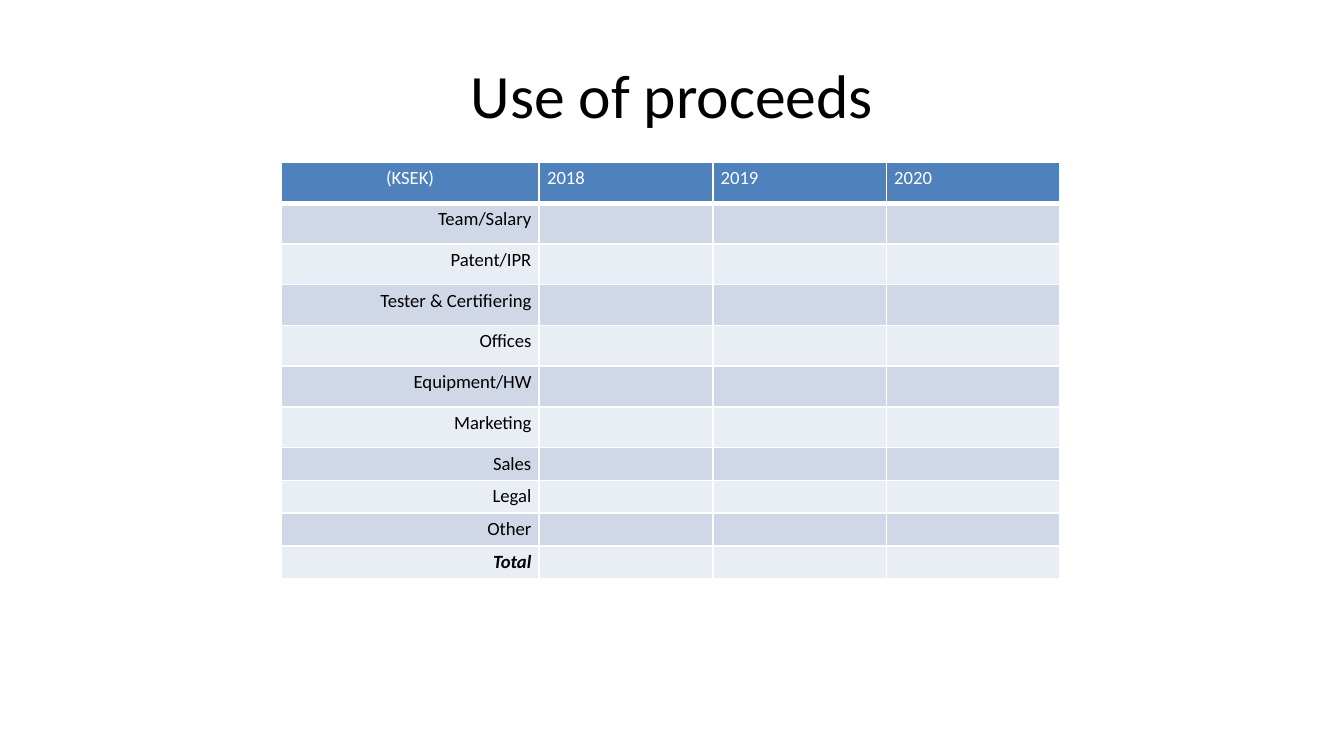
import lxml.etree
import pptx
import pptx.dml.color
import pptx.enum.text
import pptx.oxml.ns
import pptx.util

Cm = pptx.util.Cm
Pt = pptx.util.Pt
RGBColor = pptx.dml.color.RGBColor
PP_ALIGN = pptx.enum.text.PP_ALIGN
qn = pptx.oxml.ns.qn

WHITE = RGBColor(0xFF, 0xFF, 0xFF)
BLACK = RGBColor(0, 0, 0)
HEADER_BLUE = RGBColor(0x4F, 0x81, 0xBD)
BAND_DARK = RGBColor(0xD0, 0xD8, 0xE8)
BAND_LIGHT = RGBColor(0xE9, 0xED, 0xF4)
FONT = "Calibri"

HEADINGS = ["(KSEK)", "2018", "2019", "2020"]
COSTS = ["Team/Salary", "Patent/IPR", "Tester & Certifiering", "Offices",
         "Equipment/HW", "Marketing", "Sales", "Legal", "Other", "Total"]
COLUMN_WIDTHS = [Cm(4.88)] + [Cm(3.28)] * 3
ROW_HEIGHTS = [Cm(0.77)] * 7 + [Cm(0.62)] * 4


def style_run(run, size, color):
    run.font.name = FONT
    run.font.size = Pt(size)
    run.font.color.rgb = color


def add_border(cell, side, width):
    line = lxml.etree.SubElement(cell._tc.get_or_add_tcPr(), qn(f"a:ln{side}"), w=str(Pt(width)))
    fill = lxml.etree.SubElement(line, qn("a:solidFill"))
    lxml.etree.SubElement(fill, qn("a:srgbClr"), val=str(WHITE))


presentation = pptx.Presentation()
presentation.slide_width = Cm(25.4)
presentation.slide_height = Cm(14.29)
slide = presentation.slides.add_slide(presentation.slide_layouts[6])

# Proceeds table
proceeds = slide.shapes.add_table(
    len(ROW_HEIGHTS), len(COLUMN_WIDTHS), Cm(5.31), Cm(3.07),
    sum(COLUMN_WIDTHS), sum(ROW_HEIGHTS)).table
for column, width in zip(proceeds.columns, COLUMN_WIDTHS):
    column.width = width
for row, height in zip(proceeds.rows, ROW_HEIGHTS):
    row.height = height

entries = [HEADINGS] + [[cost, "", "", ""] for cost in COSTS]
for row_number, entry in enumerate(entries):
    is_header = row_number == 0
    if is_header:
        background = HEADER_BLUE
    else:
        background = BAND_DARK if row_number % 2 else BAND_LIGHT

    for column_number, text in enumerate(entry):
        cell = proceeds.cell(row_number, column_number)
        cell.margin_left = cell.margin_right = Cm(0.15)
        cell.margin_top = cell.margin_bottom = Cm(0.09)
        for side in "LRTB":
            add_border(cell, side, 3 if is_header and side == "B" else 1)
        cell.fill.solid()
        cell.fill.fore_color.rgb = background

        paragraph = cell.text_frame.paragraphs[0]
        if not text:
            # Keep empty cells from stretching their row
            lxml.etree.SubElement(paragraph._p, qn("a:endParaRPr"), sz="1000")
            continue
        paragraph.text = text
        if column_number == 0:
            paragraph.alignment = PP_ALIGN.CENTER if is_header else PP_ALIGN.RIGHT
        run = paragraph.runs[0]
        style_run(run, 10, WHITE if is_header else BLACK)
        run.font.bold = run.font.italic = text == "Total"

# Title
title = slide.shapes.add_textbox(Cm(1.27), Cm(0.58), Cm(22.86), Cm(2.39)).text_frame
title.word_wrap = True
title.vertical_anchor = pptx.enum.text.MSO_ANCHOR.MIDDLE
title.text = "Use of proceeds"
title.paragraphs[0].alignment = PP_ALIGN.CENTER
style_run(title.paragraphs[0].runs[0], 33, BLACK)

presentation.save("out.pptx")
